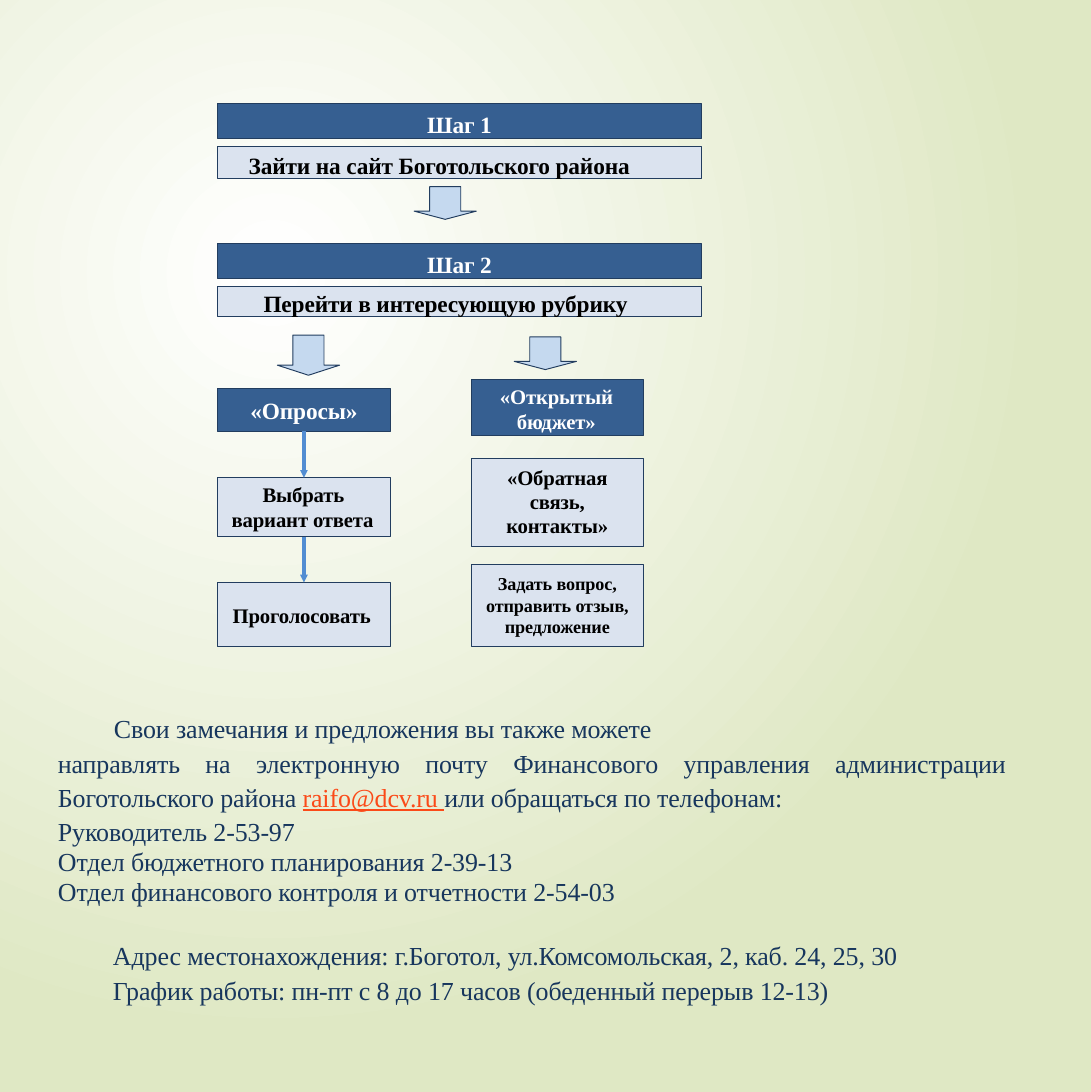
"""Builds the slide that shows how to vote or send feedback on the district site."""
from lxml.etree import SubElement
from pptx import Presentation
from pptx.dml.color import RGBColor
from pptx.enum.shapes import MSO_CONNECTOR, MSO_SHAPE
from pptx.enum.text import MSO_ANCHOR, PP_ALIGN
from pptx.oxml.ns import qn
from pptx.util import Pt

COLORS = {
    "white": "FFFFFF", "black": "000000", "green": "DFE8C4",
    "head": "365F91", "body": "DBE3EF", "outline": "223D5F",
    "arrow": "C5D9EF", "link": "528DD2", "text": "17365D", "mail": "FB4A18",
}
CENTER, LEFT, JUSTIFY = PP_ALIGN.CENTER, PP_ALIGN.LEFT, PP_ALIGN.JUSTIFY


def rgb(name):
    return RGBColor.from_string(COLORS[name])


class Deck:
    def __init__(self, width, height, font):
        self.prs = Presentation()
        self.prs.slide_width, self.prs.slide_height = Pt(width), Pt(height)
        self.slide = self.prs.slides.add_slide(self.prs.slide_layouts[6])
        self.shapes = self.slide.shapes
        self.font = font

    def background(self, inner, outer):
        fill = self.slide.background.fill
        fill.gradient()
        for stop, color in zip(fill.gradient_stops, (inner, outer)):
            stop.color.rgb = rgb(color)
        lin = next(self.slide.element.iter(qn("a:lin")))
        grad = lin.getparent()
        grad.remove(lin)
        circle = SubElement(grad, qn("a:path"))
        circle.set("path", "circle")
        rect = SubElement(circle, qn("a:fillToRect"))
        for side, value in zip("ltrb", (50, 50, 100, 100)):
            rect.set(side, str(value * 1000))

    def shape(self, kind, x, y, w, h, fill):
        sp = self.shapes.add_shape(kind, Pt(x), Pt(y), Pt(w), Pt(h))
        sp.shadow.inherit = False
        sp.fill.solid()
        sp.fill.fore_color.rgb = rgb(fill)
        sp.line.color.rgb = rgb("outline")
        sp.line.width = Pt(0.75)
        return sp

    def frame(self, sp, top):
        tf = sp.text_frame
        tf.word_wrap = True
        tf.vertical_anchor = MSO_ANCHOR.TOP
        tf.margin_left = tf.margin_right = tf.margin_bottom = 0
        tf.margin_top = Pt(top)
        return tf

    def paragraph(self, p, align=LEFT, left=0, right=0, first=0, line=None, before=0):
        p.alignment = align
        p.space_before = Pt(before)
        if line:
            p.line_spacing = line
        pPr = p._p.get_or_add_pPr()
        for key, value in (("marL", left), ("marR", right), ("indent", first)):
            pPr.set(key, str(int(Pt(value))))

    def run(self, p, text, size, color, bold=False, underline=False):
        r = p.add_run()
        r.text = text
        r.font.name = self.font
        r.font.size = Pt(size)
        r.font.bold = bold
        r.font.underline = underline
        r.font.color.rgb = rgb(color)
        r.font._element.set("spc", "-10")

    def box(self, x, y, w, h, text, size, top, fill="body", **layout):
        sp = self.shape(MSO_SHAPE.RECTANGLE, x, y, w, h, fill)
        p = self.frame(sp, top).paragraphs[0]
        self.paragraph(p, **layout)
        self.run(p, text, size, "white" if fill == "head" else "black", bold=True)
        return sp

    def arrow(self, x, y, h):
        sp = self.shape(MSO_SHAPE.DOWN_ARROW, x, y, 48, h, "arrow")
        sp.adjustments[0], sp.adjustments[1] = 0.5, 0.25

    def link(self, above, below):
        cn = self.shapes.add_connector(MSO_CONNECTOR.STRAIGHT, 0, 0, 0, 0)
        cn.begin_connect(above, 2)
        cn.end_connect(below, 0)
        cn.line.color.rgb = rgb("link")
        cn.line.width = Pt(3)
        spPr = cn._element.spPr
        tail = SubElement(spPr.find(qn("a:ln")), qn("a:tailEnd"))
        for key, value in (("type", "triangle"), ("w", "sm"), ("len", "sm")):
            tail.set(key, value)
        SubElement(spPr, qn("a:effectLst"))

    def textbox(self, x, y, w, h, top, paragraphs):
        tf = self.frame(self.shapes.add_textbox(Pt(x), Pt(y), Pt(w), Pt(h)), top)
        for i, (layout, runs) in enumerate(paragraphs):
            p = tf.add_paragraph() if i else tf.paragraphs[0]
            self.paragraph(p, **layout)
            for text, color in runs:
                self.run(p, text, 20, color, underline=color == "mail")


def main():
    deck = Deck(841.7, 842.4, "Times New Roman")
    deck.background("white", "green")

    polls_x, budget_x, wide, narrow = 168, 363.5, 373, 133
    for number, y in ((1, 79.7), (2, 187.7)):
        deck.box(polls_x, y, wide, 27.5, f"Шаг {number}", 18, 5.3, "head", align=CENTER)
    deck.box(polls_x, 113, wide, 25, "Зайти на сайт Боготольского района", 18, 4,
             left=113.8, first=-90, line=Pt(21.1))
    deck.box(polls_x, 221, wide, 23.5, "Перейти в интересующую рубрику", 18, 1.7,
             left=108, first=-72.7)
    for x, y, h in ((319.5, 144, 25.2), (214, 258.5, 31), (396.7, 259.9, 25.2)):
        deck.arrow(x, y, h)

    polls = [
        deck.box(polls_x, 300, narrow, 32.7, "«Опросы»", 18, 5.8, "head", left=25.2),
        deck.box(polls_x, 368.6, narrow, 45.4, "Выбрать вариант ответа", 16, 3.4,
                 left=10.8, first=23.8),
        deck.box(polls_x, 449.3, narrow, 49.7, "Проголосовать", 16, 15.8, left=11.5),
    ]
    for above, below in zip(polls, polls[1:]):
        deck.link(above, below)

    deck.box(budget_x, 293, narrow, 43.2, "«Открытый бюджет»", 16, 3.8, "head",
             left=35.3, first=-13, line=Pt(18.7))
    deck.box(budget_x, 353.5, narrow, 68.4, "«Обратная связь, контакты»", 16, 5.7,
             align=CENTER, left=20, right=20, line=0.98)
    deck.box(budget_x, 435.6, narrow, 63.4,
             "Задать вопрос, отправить отзыв, предложение", 14, 7.1,
             align=CENTER, line=0.98)

    plain = {"align": JUSTIFY, "left": 0.7}
    close = {**plain, "line": Pt(23.1)}
    deck.textbox(44, 546.5, 731.5, 231.8, 3.5, [
        ({"align": JUSTIFY, "left": 43.9},
         [("Свои замечания и предложения вы также можете", "text")]),
        ({**plain, "line": 1.1},
         [("направлять на электронную почту Финансового управления администрации "
           "Боготольского района ", "text"),
          ("raifo@dcv.ru ", "mail"),
          ("или обращаться по телефонам:", "text")]),
        ({**plain, "before": 2.4}, [("Руководитель 2-53-97", "text")]),
        (close, [("Отдел бюджетного планирования 2-39-13", "text")]),
        (close, [("Отдел финансового контроля и отчетности 2-54-03", "text")]),
        ({"left": 0.7, "first": 42.5, "line": 1.11, "before": 22.5},
         [("Адрес местонахождения: г.Боготол, ул.Комсомольская, 2, каб. 24, 25, 30",
           "text")]),
        ({"left": 0.7, "first": 42.5, "line": Pt(26.4), "before": 1},
         [("График работы: пн-пт с 8 до 17 часов (обеденный перерыв 12-13)", "text")]),
    ])
    deck.prs.save("out.pptx")


if __name__ == "__main__":
    main()
